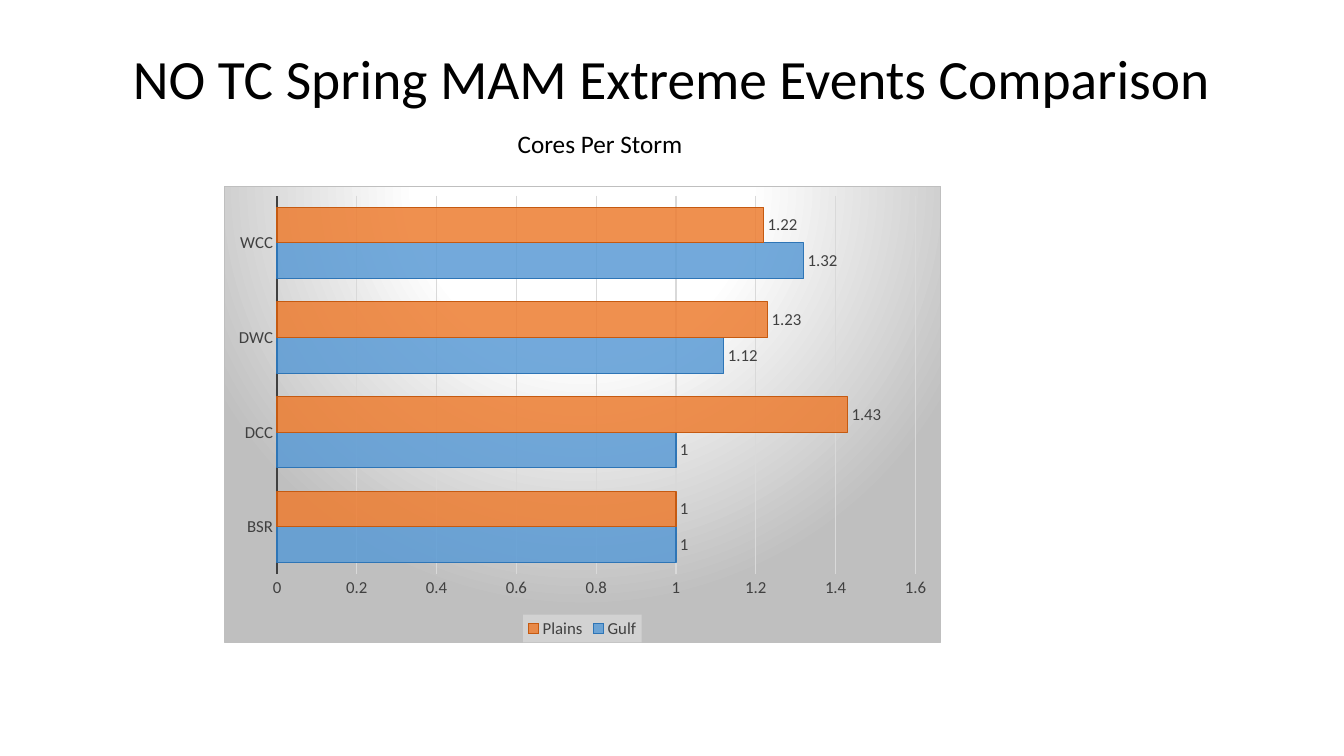
"""Build a slide comparing cores per storm for spring extreme events."""
from lxml import etree
from pptx import Presentation
from pptx.chart.data import CategoryChartData
from pptx.dml.color import RGBColor
from pptx.enum.chart import XL_CHART_TYPE, XL_LABEL_POSITION, XL_LEGEND_POSITION, XL_TICK_MARK
from pptx.enum.text import MSO_ANCHOR, PP_ALIGN
from pptx.oxml import parse_xml
from pptx.oxml.ns import nsdecls, qn
from pptx.util import Emu, Pt

TITLE = "NO TC Spring MAM Extreme Events Comparison"
SUBTITLE = "Cores Per Storm"
CATEGORIES = ["BSR", "DCC", "DWC", "WCC"]
BLACK = RGBColor(0x00, 0x00, 0x00)
DARK_GRAY = RGBColor(0x40, 0x40, 0x40)
GRID_GRAY = RGBColor(0xD9, 0xD9, 0xD9)
SERIES = [
    ("Gulf", (1, 1, 1.12, 1.32), RGBColor(0x5B, 0x9B, 0xD5), RGBColor(0x2E, 0x75, 0xB6)),
    ("Plains", (1, 1.43, 1.23, 1.22), RGBColor(0xED, 0x7D, 0x31), RGBColor(0xC5, 0x5A, 0x11)),
]

SLIDE_BOX = (1344, 756)
TITLE_BOX = (92, 40, 1159, 146)
SUBTITLE_BOX = (239, 123, 722, 40)
CHART_BOX = (224, 186, 717, 457)
FONT = "Calibri"
BAR_ALPHA = "85000"

CHART_FILL = f"""<c:spPr {nsdecls("c", "a")}>
  <a:gradFill>
    <a:gsLst>
      <a:gs pos="0"><a:srgbClr val="FFFFFF"/></a:gs>
      <a:gs pos="39000"><a:srgbClr val="FFFFFF"/></a:gs>
      <a:gs pos="100000"><a:srgbClr val="BFBFBF"/></a:gs>
    </a:gsLst>
    <a:path path="circle"><a:fillToRect l="50000" t="-80000" r="50000" b="180000"/></a:path>
  </a:gradFill>
  <a:ln w="9525"><a:solidFill><a:srgbClr val="BFBFBF"/></a:solidFill></a:ln>
</c:spPr>"""
LEGEND_FILL = f"""<c:spPr {nsdecls("c", "a")}>
  <a:solidFill><a:srgbClr val="F2F2F2"><a:alpha val="39000"/></a:srgbClr></a:solidFill>
  <a:ln><a:noFill/></a:ln>
</c:spPr>"""


def px(*lengths):
    """Turn px lengths into EMU at 100.8 px to the inch."""
    return [Emu(round(length * 914400 / 100.8)) for length in lengths]


def style_font(font, size, color):
    """Set typeface, size and colour."""
    font.name = FONT
    font.size = Pt(size)
    font.color.rgb = color


def add_text(slide, box, text, size, top_inset, line_spacing):
    """Add one centred line of text."""
    frame = slide.shapes.add_textbox(*px(*box)).text_frame
    frame.word_wrap = True
    frame.vertical_anchor = MSO_ANCHOR.TOP
    frame.margin_top, = px(top_inset)
    paragraph = frame.paragraphs[0]
    paragraph.alignment = PP_ALIGN.CENTER
    paragraph.line_spacing = line_spacing
    run = paragraph.add_run()
    run.text = text
    style_font(run.font, size, BLACK)


def style_axes(chart):
    """Style both axes and the gridlines."""
    for axis in (chart.category_axis, chart.value_axis):
        axis.major_tick_mark = axis.minor_tick_mark = XL_TICK_MARK.NONE
        style_font(axis.tick_labels.font, 12, DARK_GRAY)
    category_line = chart.category_axis.format.line
    category_line.color.rgb = DARK_GRAY
    category_line.width = Pt(1.5)
    value_axis = chart.value_axis
    value_axis.format.line.fill.background()
    value_axis.minimum_scale, value_axis.maximum_scale, value_axis.major_unit = 0, 1.6, 0.2
    grid_line = value_axis.major_gridlines.format.line
    grid_line.color.rgb = GRID_GRAY
    grid_line.width = Pt(0.75)


def add_bar_chart(slide):
    """Add the clustered bars with labels and legend."""
    data = CategoryChartData()
    data.categories = CATEGORIES
    for name, values, _, _ in SERIES:
        data.add_series(name, values)
    chart = slide.shapes.add_chart(XL_CHART_TYPE.BAR_CLUSTERED, *px(*CHART_BOX), data).chart
    chart.has_title = False
    style_font(chart.font, 10, BLACK)
    chart.element.find(qn("c:chart")).addnext(parse_xml(CHART_FILL))
    style_axes(chart)

    plot = chart.plots[0]
    plot.gap_width = 65
    plot.overlap = 0
    plot.vary_by_categories = False
    for series, (_, _, fill, line) in zip(plot.series, SERIES):
        series.format.fill.solid()
        series.format.fill.fore_color.rgb = fill
        series.format.line.color.rgb = line
        series.format.line.width = Pt(0.75)
        labels = series.data_labels
        labels.show_value = True
        labels.position = XL_LABEL_POSITION.OUTSIDE_END
        style_font(labels.font, 12, DARK_GRAY)
    for color in chart.element.xpath(".//c:ser/c:spPr/a:solidFill/a:srgbClr"):
        etree.SubElement(color, qn("a:alpha"), val=BAR_ALPHA)

    chart.has_legend = True
    legend = chart.legend
    legend.position = XL_LEGEND_POSITION.BOTTOM
    legend.include_in_layout = False
    style_font(legend.font, 12, DARK_GRAY)
    chart.element.xpath(".//c:legend/c:txPr")[0].addprevious(parse_xml(LEGEND_FILL))


def main():
    """Build and save the slide."""
    presentation = Presentation()
    presentation.slide_width, presentation.slide_height = px(*SLIDE_BOX)
    slide = presentation.slides.add_slide(presentation.slide_layouts[6])
    add_bar_chart(slide)
    add_text(slide, TITLE_BOX, TITLE, 39.6, 12, 0.9)
    add_text(slide, SUBTITLE_BOX, SUBTITLE, 18, 5, 1.0)
    presentation.save("out.pptx")


if __name__ == "__main__":
    main()
